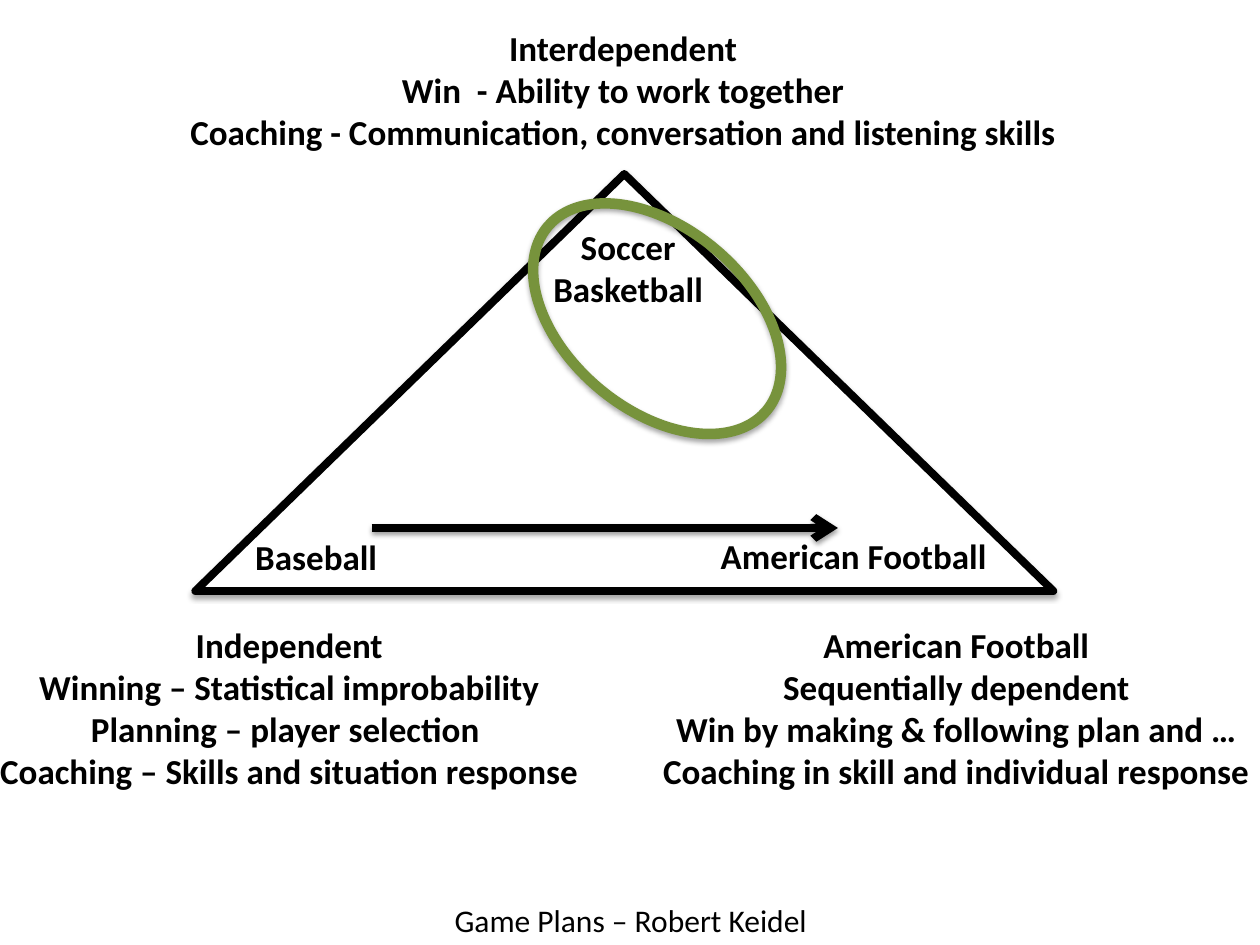
from dataclasses import dataclass

from lxml import etree
from pptx import Presentation
from pptx import util as u
from pptx.dml.color import RGBColor
from pptx.enum import shapes, text
from pptx.oxml import ns

COLORS = {"ink": "000000", "paper": "FFFFFF", "ring": "77933C"}
FONT = "Calibri"


@dataclass
class Label:
    left: float
    top: float
    width: float
    height: float
    lines: list[str]
    size: float = 20
    bold: bool = True
    align: text.PP_ALIGN = text.PP_ALIGN.CENTER


LABELS = [
    Label(-8.6, 352.8, 347.8, 128.2, [
        "Independent",
        "Winning – Statistical improbability",
        "Planning – player selection ",
        "Coaching – Skills and situation response",
    ]),
    Label(100.8, 11.5, 510.5, 79.9, [
        "Interdependent",
        "Win  - Ability to work together",
        "Coaching - Communication, conversation and listening skills",
    ]),
    Label(370.1, 352.8, 352.8, 104.4, [
        "American Football",
        "Sequentially dependent",
        "Win by making & following plan and …",
        "Coaching in skill and individual response",
    ]),
    Label(252.7, 511.2, 226.1, 28.8, ["Game Plans – Robert Keidel"],
          18, False, text.PP_ALIGN.LEFT),
    Label(138.2, 302.4, 85, 31.7, ["Baseball"]),
    Label(403.2, 301.7, 169.2, 31.7, ["American Football"]),
    Label(308.2, 125.3, 101.5, 55.4, ["Soccer", "Basketball"]),
]


def color(name: str) -> RGBColor:
    return RGBColor.from_string(COLORS[name])


def add_child(parent, tag: str, **attributes: str):
    return etree.SubElement(parent, ns.qn(tag), attributes)


def set_line(shape, name: str, width: float) -> None:
    shape.line.color.rgb = color(name)
    shape.line.width = u.Pt(width)


def add_shadow(shape, opacity: int, distance: float) -> None:
    effects = add_child(shape._element.spPr, "a:effectLst")
    shadow = add_child(effects, "a:outerShdw", blurRad=str(u.Pt(3.1)),
                       dist=str(u.Pt(distance)), dir="5400000", rotWithShape="0")
    ink = add_child(shadow, "a:srgbClr", val=COLORS["ink"])
    add_child(ink, "a:alpha", val=str(opacity * 1000))


def add_label(container, label: Label) -> None:
    box = container.add_textbox(u.Pt(label.left), u.Pt(label.top),
                                u.Pt(label.width), u.Pt(label.height))
    frame = box.text_frame
    frame.word_wrap = False
    frame.auto_size = text.MSO_AUTO_SIZE.SHAPE_TO_FIT_TEXT
    frame.text = "\n".join(label.lines)
    for paragraph in frame.paragraphs:
        paragraph.alignment = label.align
        paragraph.font.name = FONT
        paragraph.font.size = u.Pt(label.size)
        paragraph.font.bold = label.bold
        paragraph.font.color.rgb = color("ink")


def add_triangle(container) -> None:
    triangle = container.add_shape(shapes.MSO_SHAPE.ISOSCELES_TRIANGLE,
                                   u.Pt(111.6), u.Pt(99.4), u.Pt(490.3), u.Pt(238.3))
    triangle.fill.solid()
    triangle.fill.fore_color.rgb = color("paper")
    set_line(triangle, "ink", 4.5)
    add_child(triangle.line._ln, "a:round")
    add_shadow(triangle, 35, 1.8)


def add_arrow(container) -> None:
    arrow = container.add_connector(shapes.MSO_CONNECTOR.STRAIGHT,
                                    u.Pt(212.4), u.Pt(301.7), u.Pt(478.8), u.Pt(301.7))
    set_line(arrow, "ink", 4.5)
    add_child(arrow.line._ln, "a:tailEnd", type="arrow")
    add_shadow(arrow, 38, 1.6)


def add_ring(container) -> None:
    ring = container.add_shape(shapes.MSO_SHAPE.OVAL,
                               u.Pt(293.8), u.Pt(130.3), u.Pt(163.4), u.Pt(103.7))
    ring.rotation = 40.1
    ring.fill.background()
    set_line(ring, "ring", 6)
    add_shadow(ring, 35, 1.8)


def main() -> None:
    presentation = Presentation()
    presentation.slide_width = u.Pt(720)
    presentation.slide_height = u.Pt(540)
    slide = presentation.slides.add_slide(presentation.slide_layouts[6])
    diagram = slide.shapes.add_group_shape().shapes
    add_triangle(diagram)
    for label in LABELS:
        add_label(diagram, label)
    add_arrow(slide.shapes)
    add_ring(slide.shapes)
    presentation.save("out.pptx")


if __name__ == "__main__":
    main()
